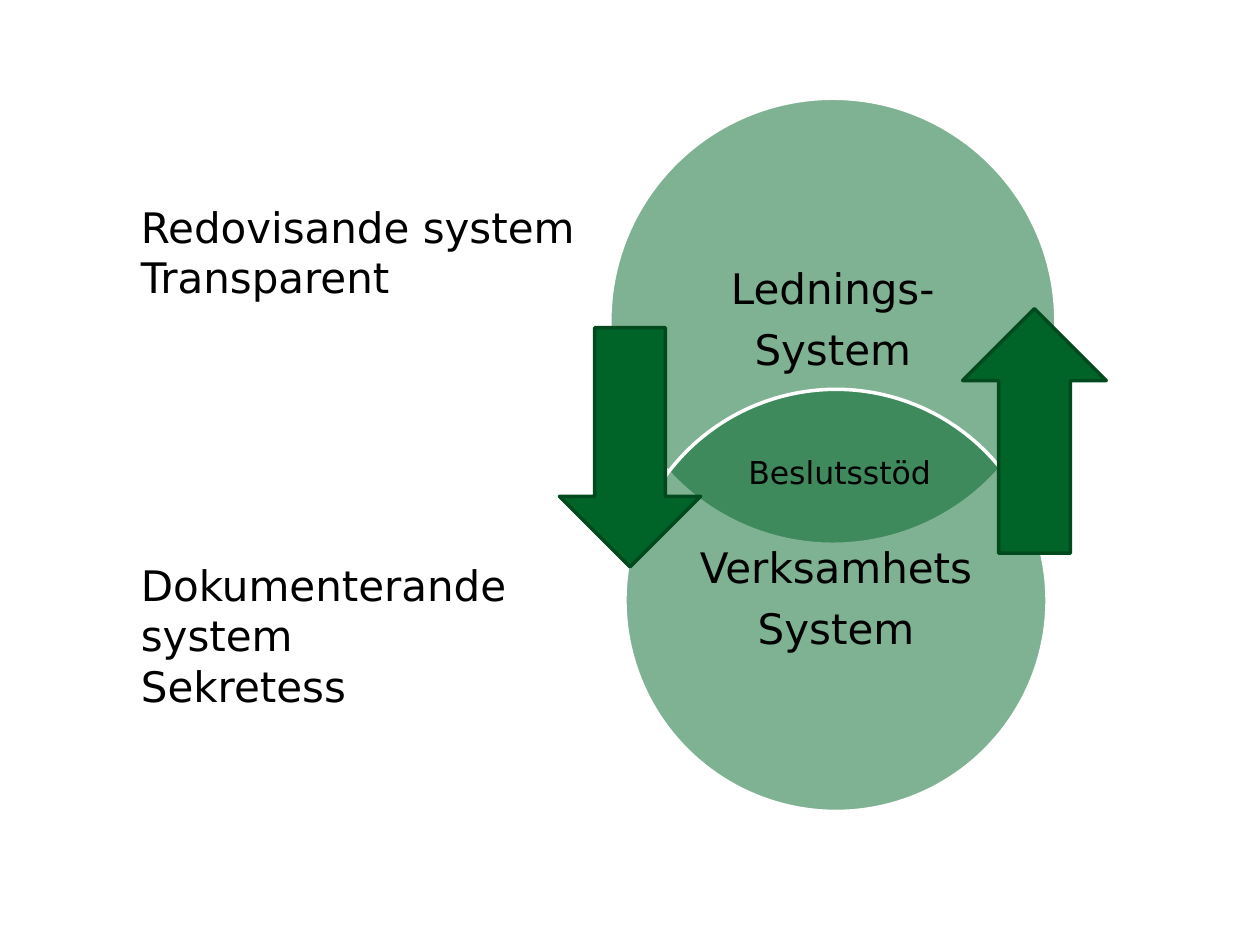
from math import sqrt

from lxml import etree
from pptx import Presentation
from pptx.dml.color import RGBColor
from pptx.enum.shapes import MSO_SHAPE as Shape
from pptx.enum.text import MSO_ANCHOR as Anchor, MSO_AUTO_SIZE as AutoSize, PP_ALIGN as Align
from pptx.oxml.ns import qn
from pptx.util import Inches, Pt

FONT = "DejaVu Sans"
GREEN, DARK_GREEN, WHITE, BLACK = "006428", "004A1E", "FFFFFF", "000000"


def color(hex_code):
    return RGBColor.from_string(hex_code)


def add_outlined(slide, kind, left, top, width, height, outline, opacity=100):
    shape = slide.shapes.add_shape(
        kind, Inches(left), Inches(top), Inches(width), Inches(height))
    shape.shadow.inherit = False
    shape.fill.solid()
    shape.fill.fore_color.rgb = color(GREEN)
    shape.line.color.rgb = color(outline)
    shape.line.width = Pt(2)
    if opacity < 100:
        fill_color = shape.fill._xPr.find(qn("a:solidFill"))[0]
        etree.SubElement(fill_color, qn("a:alpha")).set("val", str(opacity * 1000))
    return shape


def add_text(slide, left, top, width, height, lines, size=24, wrap=True):
    box = slide.shapes.add_textbox(
        Inches(left), Inches(top), Inches(width), Inches(height))
    frame = box.text_frame
    frame.word_wrap = wrap
    frame.auto_size = AutoSize.SHAPE_TO_FIT_TEXT
    frame.text = "\n".join(lines)
    for paragraph in frame.paragraphs:
        paragraph.font.name = FONT
        paragraph.font.size = Pt(size)
        paragraph.font.color.rgb = color(BLACK)
    return frame


def add_system_circle(slide, left, top, diameter, lines):
    add_outlined(slide, Shape.OVAL, left, top, diameter, diameter, WHITE, opacity=50)
    # The label fills the square inscribed in the circle
    side = diameter / sqrt(2)
    inset = (diameter - side) / 2
    frame = add_text(slide, left + inset, top + inset, side, side, lines)
    frame.auto_size = AutoSize.NONE
    frame.vertical_anchor = Anchor.MIDDLE
    frame.margin_top = frame.margin_bottom = Inches(0.1)
    for paragraph in frame.paragraphs:
        paragraph.alignment = Align.CENTER
        paragraph.line_spacing = 0.9
        paragraph.space_after = Pt(9)


def main():
    prs = Presentation()
    prs.slide_width, prs.slide_height = Inches(10), Inches(7.5)
    slide = prs.slides.add_slide(prs.slide_layouts[6])

    # Overlapping systems
    add_system_circle(slide, 4.84, 0.78, 3.54, ["Lednings-", "System"])
    add_system_circle(slide, 4.96, 3.09, 3.35, ["Verksamhets", "System"])

    # Flow between the systems
    add_outlined(slide, Shape.DOWN_ARROW, 4.44, 2.6, 1.12, 1.9, DARK_GREEN)
    upward_flow = add_outlined(slide, Shape.DOWN_ARROW, 7.64, 2.45, 1.14, 1.94, DARK_GREEN)
    upward_flow.rotation = 180

    # Descriptions and the label of the overlap
    add_text(slide, 1.02, 1.55, 3.94, 0.91, ["Redovisande system", "Transparent"])
    add_text(slide, 1.02, 4.39, 4.37, 1.31, ["Dokumenterande system", "Sekretess"])
    add_text(slide, 5.84, 3.55, 1.65, 0.4, ["Beslutsstöd"], size=18, wrap=False)

    prs.save("out.pptx")


if __name__ == "__main__":
    main()
